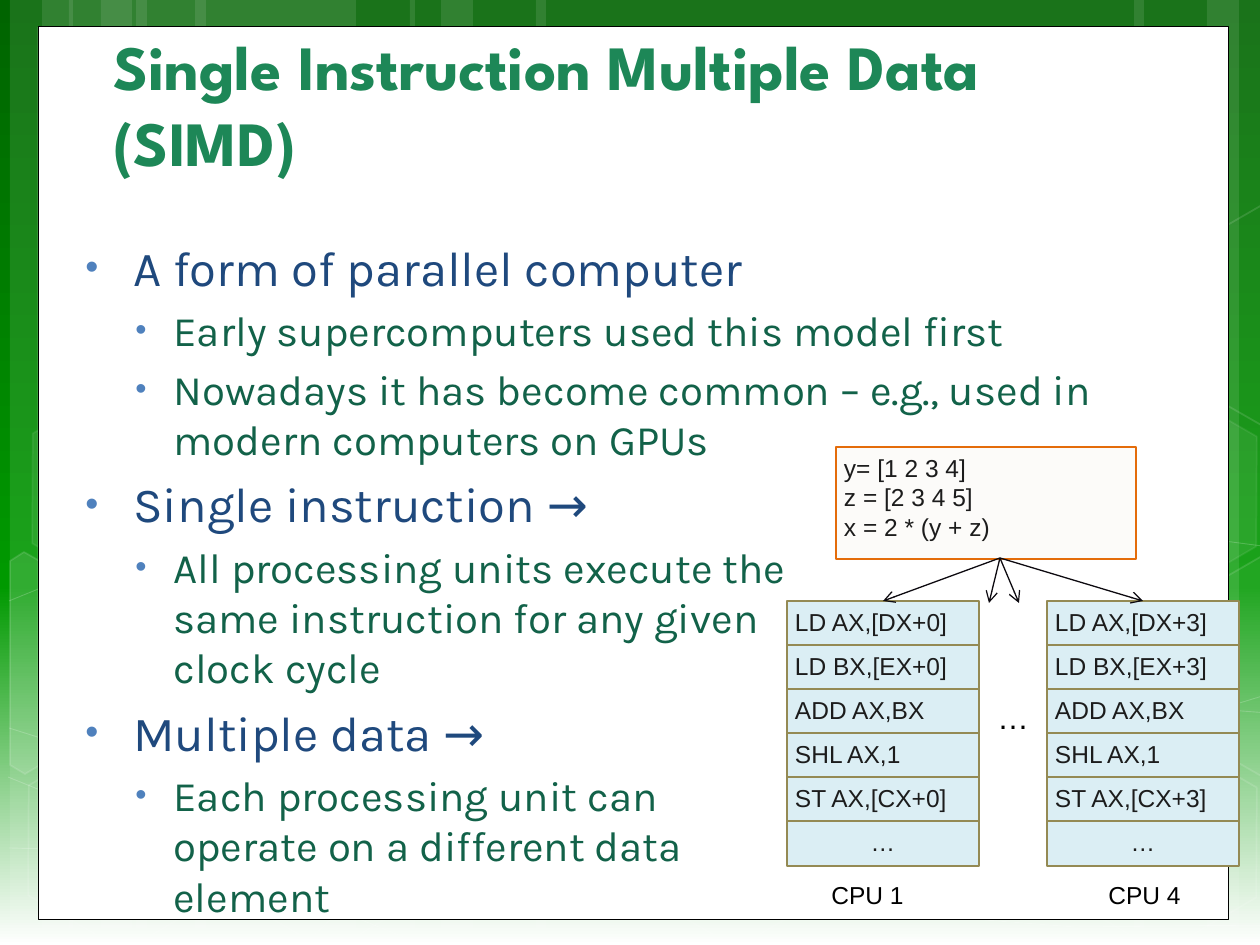
from copy import deepcopy

from lxml.etree import SubElement
from pptx import Presentation
from pptx.dml.color import RGBColor
from pptx.enum.shapes import MSO_CONNECTOR as CONN, MSO_SHAPE as SHAPE
from pptx.enum.text import MSO_ANCHOR as ANCHOR, PP_ALIGN as ALIGN
from pptx.oxml.ns import qn
from pptx.util import Emu, Pt

COLORS = {
    "dark_green": "006400", "green": "009900", "white": "FFFFFF", "black": "000000",
    "title": "1D8757", "topic": "1F497D", "detail": "126249", "bullet": "4F81BD",
    "cell": "DBEEF4", "cell_line": "948A54", "code": "FCFBF9", "code_line": "E46C0A",
    "ink": "1C1C1C", "arrow": "0D0A10",
}
# left, width
BANDS = [(136, 220), (10, 63), (42, 105), (195, 220), (69, 63), (101, 105),
         (924, 220), (1207, 63), (1134, 105), (536, 388), (410, 63), (441, 105)]
# left, top, fill opacity, line opacity (percent)
HEXAGONS = [(626, 742, 6, 12), (14, 745, 0, 12), (18, 393, 7, 8),
            (219, 746, 0, 12), (1051, 747, 0, 12), (1051, 396, 7, 8)]
RIGHT_EDGE = [(0, 55), (95, 0), (105, 6), (105, 216), (96, 221), (0, 166)]
# points, left, top, fill opacity
CUT_HEXAGONS = [
    ([(0, 9), (14, 0), (111, 55), (110, 166), (15, 222), (0, 213)], 10, 552, 10),
    (RIGHT_EDGE, 1167, 556, 4),
    (RIGHT_EDGE, 1167, 205, 0),
]
WAVES = [
    [(9, 848), (239, 854), (577, 838), (998, 777), (1269, 694)],
    [(9, 601), (152, 543), (437, 488), (824, 488), (1269, 547)],
    [(8, 777), (421, 944)],
    [(9, 728), (161, 776), (450, 848), (791, 905), (1075, 927), (1269, 925)],
    [(305, 944), (381, 871), (489, 805), (592, 767), (766, 728), (857, 717),
     (1000, 708), (1201, 708), (1268, 713)],
]
# level, text
OUTLINE = [
    (0, "A form of parallel computer"),
    (1, "Early supercomputers used this model first"),
    (1, "Nowadays it has become common – e.g., used in modern computers on GPUs"),
    (0, "Single instruction →"),
    (1, "All processing units execute the\nsame instruction for any given\nclock cycle"),
    (0, "Multiple data →"),
    (1, "Each processing unit can\noperate on a different data\nelement"),
]
# size, color, left margin, first-line indent
LEVELS = [(28, "topic", 48, -48), (24, "detail", 88, -38)]
CODE = "y= [1 2 3 4]\nz = [2 3 4 5]\nx = 2 * (y + z)"


def px(length):
    return Emu(round(length * 914400 / 126))


def rgb(name):
    return RGBColor.from_string(COLORS[name])


def style(shape, fill=None, line=None, weight=1.0, fill_alpha=100, line_alpha=100):
    """Set fill, line and their opacity in percent; None means no paint."""
    shape.shadow.inherit = False
    for paint, color, alpha in ((shape.fill, fill, fill_alpha),
                                (shape.line.fill, line, line_alpha)):
        if color is None:
            paint.background()
            continue
        paint.solid()
        paint.fore_color.rgb = rgb(color)
        if alpha < 100:
            parent = shape.element.spPr
            if paint is not shape.fill:
                parent = parent.find(qn("a:ln"))
            srgb = parent.find(qn("a:solidFill")).find(qn("a:srgbClr"))
            SubElement(srgb, qn("a:alpha"), val=str(alpha * 1000))
    if line:
        shape.line.width = Pt(weight)


def add_preset(slide, kind, left, top, width, height, **look):
    shape = slide.shapes.add_shape(kind, px(left), px(top), px(width), px(height))
    style(shape, **look)
    return shape


def add_outline(slide, points, left=0, top=0, close=False, **look):
    spots = [(px(left + x), px(top + y)) for x, y in points]
    builder = slide.shapes.build_freeform(*spots[0])
    builder.add_line_segments(spots[1:], close=close)
    style(builder.convert_to_shape(), **look)


def format_text(paragraph, font, size, color, bold=False):
    for run in paragraph.runs:
        run.font.name, run.font.size, run.font.bold = font, Pt(size), bold
        run.font.color.rgb = rgb(color)


def add_text(slide, text, left, top, width, height, font, size, color, bold=False, wrap=False):
    frame = slide.shapes.add_textbox(px(left), px(top), px(width), px(height)).text_frame
    frame.word_wrap = wrap
    frame.text = text
    format_text(frame.paragraphs[0], font, size, color, bold)
    return frame


def add_box(slide, text, left, top, width, height, fill, line, align=ALIGN.LEFT):
    box = add_preset(slide, SHAPE.RECTANGLE, left, top, width, height,
                     fill=fill, line=line, weight=1.5)
    frame = box.text_frame
    frame.vertical_anchor = ANCHOR.TOP
    frame.margin_left = frame.margin_right = px(8)
    frame.margin_top = frame.margin_bottom = px(6)
    frame.text = text
    for paragraph in frame.paragraphs:
        paragraph.alignment = align
        format_text(paragraph, "Arial", 14, "ink")
    return box


def add_arrow(slide, start, end, target=None):
    arrow = slide.shapes.add_connector(CONN.STRAIGHT, *map(px, start + end))
    if target is not None:
        arrow.end_connect(target, 0)
    arrow.line.color.rgb = rgb("arrow")
    arrow.line.width = Pt(0.75)
    props = arrow.element.spPr
    SubElement(props.find(qn("a:ln")), qn("a:tailEnd"), type="arrow")
    SubElement(props, qn("a:effectLst"))


def add_background(slide):
    fill = slide.background.fill
    fill.gradient()
    fill.gradient_angle = 270
    stops = slide.element.find(".//" + qn("a:gsLst"))
    stops.append(deepcopy(stops[0]))
    for stop, position, color in zip(fill.gradient_stops, (0, 0.62, 1),
                                     ("dark_green", "green", "white")):
        stop.position = position
        stop.color.rgb = rgb(color)


def add_backdrop(slide):
    for left, width in BANDS:
        add_preset(slide, SHAPE.RECTANGLE, left, 0, width, 945, fill="white", fill_alpha=10)
    for points in WAVES:
        add_outline(slide, points, line="white", weight=0.5, line_alpha=20)
    for left, top, fill_alpha, line_alpha in HEXAGONS:
        hexagon = add_preset(slide, SHAPE.HEXAGON, left, top, 220, 191,
                             fill="white" if fill_alpha else None, line="white",
                             fill_alpha=fill_alpha, line_alpha=line_alpha)
        hexagon.adjustments[0] = 0.285
        hexagon.rotation = 30
    for points, left, top, fill_alpha in CUT_HEXAGONS:
        add_outline(slide, points, left, top, close=True,
                    fill="white" if fill_alpha else None, line="white",
                    fill_alpha=fill_alpha, line_alpha=12)
    add_preset(slide, SHAPE.RECTANGLE, 38, 27, 1190, 893, fill="white", line="black", weight=0.5)


def add_bullets(slide):
    frame = slide.shapes.add_textbox(px(73), px(231), px(1104), px(684)).text_frame
    frame.word_wrap = True
    for index, (level, text) in enumerate(OUTLINE):
        paragraph = frame.add_paragraph() if index else frame.paragraphs[0]
        size, color, margin, indent = LEVELS[level]
        paragraph.text = text
        paragraph.level = level
        paragraph.space_before = Pt(size * 0.2)
        format_text(paragraph, "Karla", size, color)
        props = paragraph._p.get_or_add_pPr()
        props.set("marL", str(px(margin)))
        props.set("indent", str(px(indent)))
        SubElement(SubElement(props, qn("a:buClr")), qn("a:srgbClr"), val=COLORS["bullet"])
        SubElement(props, qn("a:buSzPct"), val="76000")
        SubElement(props, qn("a:buFont"), typeface="Arial")
        SubElement(props, qn("a:buChar"), char="•")


def add_cpu(slide, left, lane):
    """Stack one CPU's instructions and return the top cell."""
    instructions = [f"LD AX,[DX+{lane}]", f"LD BX,[EX+{lane}]", "ADD AX,BX",
                    "SHL AX,1", f"ST AX,[CX+{lane}]", "…"]
    cells = [add_box(slide, text, left, 601 + 44 * row, 192, 45, "cell", "cell_line",
                     ALIGN.CENTER if text == "…" else ALIGN.LEFT)
             for row, text in enumerate(instructions)]
    return cells[0]


def main():
    deck = Presentation()
    deck.slide_width, deck.slide_height = px(1260), px(945)
    slide = deck.slides.add_slide(deck.slide_layouts[6])
    add_background(slide)
    add_backdrop(slide)
    title = add_text(slide, "Single Instruction Multiple Data (SIMD)", 101, 89, 1061, 96,
                     "League Spartan", 36, "title", bold=True, wrap=True)
    title.vertical_anchor = ANCHOR.BOTTOM
    add_bullets(slide)

    add_box(slide, CODE, 836, 447, 300, 112, "code", "code_line")
    first_cpu = add_cpu(slide, 787, 0)
    last_cpu = add_cpu(slide, 1047, 3)
    add_text(slide, "…", 985, 692, 57, 50, "Arial", 18, "black")
    for label, left in (("CPU 1", 819), ("CPU 4", 1096)):
        add_text(slide, label, left, 874, 98, 43, "Arial", 14, "black")
    for end, target in (((883, 601), first_cpu), ((989, 603), None),
                        ((1019, 603), None), ((1143, 601), last_cpu)):
        add_arrow(slide, (1000, 558), end, target)
    deck.save("out.pptx")


if __name__ == "__main__":
    main()
